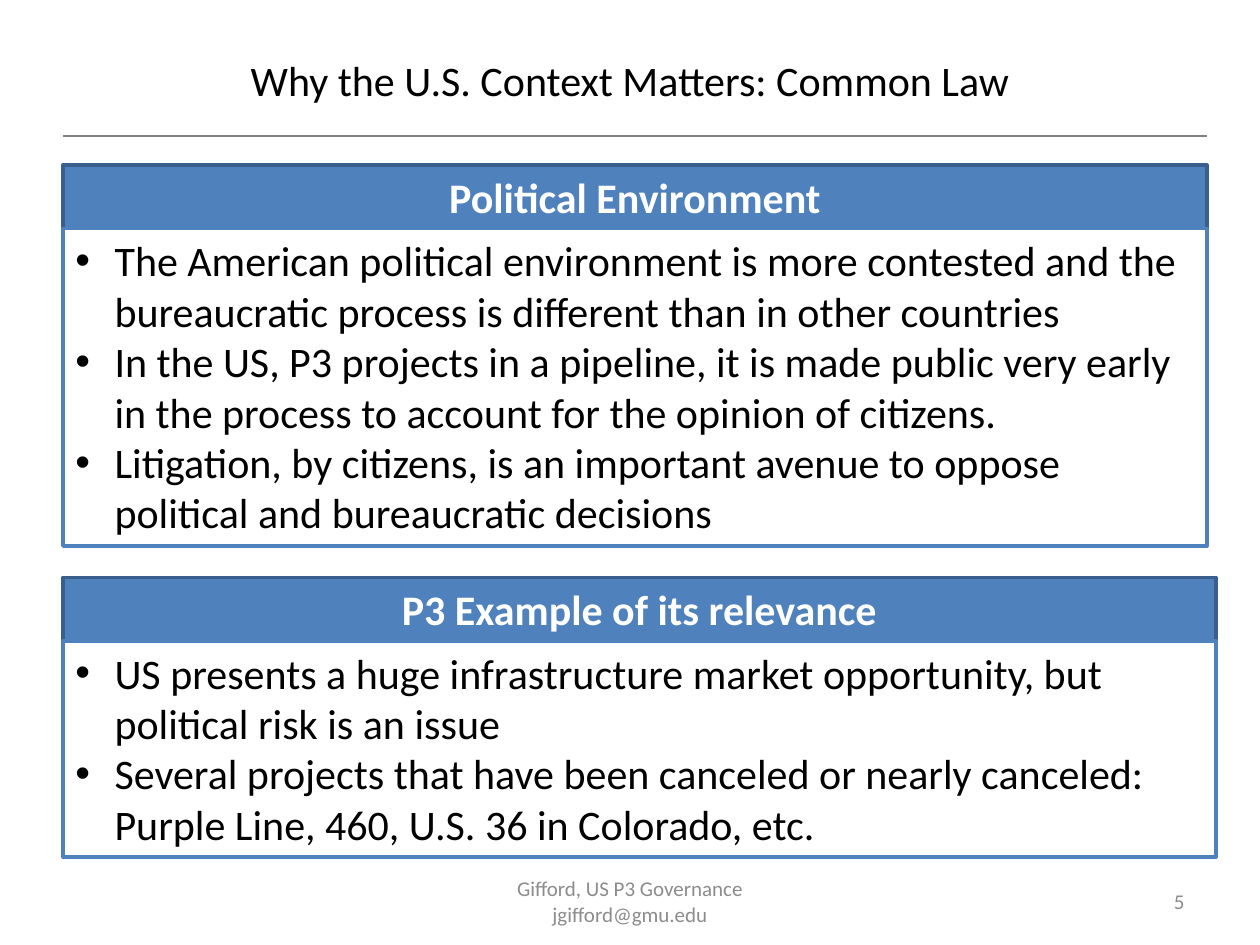
from dataclasses import dataclass

from lxml import etree
from pptx import Presentation
from pptx import util as u
from pptx.dml.color import RGBColor
from pptx.enum import shapes, text
from pptx.oxml.ns import qn


@dataclass(frozen=True)
class Theme:
    font: str = "Calibri"
    black: str = "000000"
    white: str = "FFFFFF"
    blue: str = "4F81BD"
    dark_blue: str = "3A5F8C"
    rule: str = "808080"
    muted: str = "8C8C8C"
    main_size: int = 24
    small_size: int = 12


class Deck:
    LEFT = 1.27
    HEADER_HEIGHT = 1.28
    BULLET_INDENT = 0.79

    def __init__(self, theme):
        self.theme = theme
        self.prs = Presentation()
        self.prs.slide_width, self.prs.slide_height = u.Cm(25.4), u.Cm(19.05)
        self.s = None

    def add_slide(self, title):
        self.s = self.prs.slides.add_slide(self.prs.slide_layouts[5])
        sp = self.s.shapes.title
        sp.left, sp.top, sp.width, sp.height = (
            u.Cm(v) for v in (self.LEFT, 0.33, 22.86, 2.57))
        tf = sp.text_frame
        tf.text = title
        tf.vertical_anchor = text.MSO_ANCHOR.MIDDLE
        self.format(tf, self.theme.black, align=text.PP_ALIGN.CENTER)

    def format(self, tf, color, size=None, bold=False, align=text.PP_ALIGN.LEFT):
        for p in tf.paragraphs:
            p.alignment = align
            for r in p.runs:
                r.font.name = self.theme.font
                r.font.size = u.Pt(size or self.theme.main_size)
                r.font.bold = bold
                r.font.color.rgb = RGBColor.from_string(color)

    def rule(self, y, width):
        line = self.s.shapes.add_connector(
            shapes.MSO_CONNECTOR.STRAIGHT, u.Cm(self.LEFT), u.Cm(y),
            u.Cm(self.LEFT + width), u.Cm(y))
        line.line.color.rgb = RGBColor.from_string(self.theme.rule)
        line.line.width = u.Pt(1.25)
        etree.SubElement(line._element.spPr, qn("a:effectLst"))

    def box(self, top, width, height, fill, outline, content):
        sp = self.s.shapes.add_shape(
            shapes.MSO_SHAPE.RECTANGLE, u.Cm(self.LEFT), u.Cm(top),
            u.Cm(width), u.Cm(height))
        sp.shadow.inherit = False
        sp.fill.solid()
        sp.fill.fore_color.rgb = RGBColor.from_string(fill)
        sp.line.color.rgb = RGBColor.from_string(outline)
        sp.line.width = u.Pt(2)
        tf = sp.text_frame
        tf.text = content
        tf.word_wrap = True
        tf.auto_size = text.MSO_AUTO_SIZE.SHAPE_TO_FIT_TEXT
        tf.vertical_anchor = text.MSO_ANCHOR.TOP
        return tf

    def panel(self, top, width, body_height, heading, points):
        """Draw a coloured heading bar with an outlined bullet list below."""
        t = self.theme
        tf = self.box(top, width, self.HEADER_HEIGHT, t.blue, t.dark_blue, heading)
        self.format(tf, t.white, bold=True, align=text.PP_ALIGN.CENTER)
        tf = self.box(top + self.HEADER_HEIGHT, width, body_height,
                      t.white, t.blue, "\n".join(points))
        for p in tf.paragraphs:
            self.bullet(p)
        self.format(tf, t.black)

    def bullet(self, p):
        pPr = p._p.get_or_add_pPr()
        indent = u.Cm(self.BULLET_INDENT)
        pPr.set("marL", str(indent))
        pPr.set("indent", str(-indent))
        etree.SubElement(pPr, qn("a:buFont"), typeface="Arial")
        etree.SubElement(pPr, qn("a:buChar"), char="•")

    def footer(self, left, width, content, align):
        sp = self.s.shapes.add_textbox(
            u.Cm(left), u.Cm(17.66), u.Cm(width), u.Cm(1.01))
        tf = sp.text_frame
        tf.text = content
        tf.word_wrap = True
        tf.vertical_anchor = text.MSO_ANCHOR.MIDDLE
        self.format(tf, self.theme.muted, self.theme.small_size, align=align)


def main():
    deck = Deck(Theme())
    deck.add_slide("Why the U.S. Context Matters: Common Law")
    deck.rule(2.74, 23.06)
    deck.panel(3.33, 23.06, 6.4, "Political Environment", [
        "The American political environment is more contested and the "
        "bureaucratic process is different than in other countries",
        "In the US, P3 projects in a pipeline, it is made public very early "
        "in the process to account for the opinion of citizens.",
        "Litigation, by citizens, is an important avenue to oppose "
        "political and bureaucratic decisions",
    ])
    deck.panel(11.64, 23.24, 4.36, "P3 Example of its relevance", [
        "US presents a huge infrastructure market opportunity, but "
        "political risk is an issue",
        "Several projects that have been canceled or nearly canceled: "
        "Purple Line, 460, U.S. 36 in Colorado, etc.",
    ])
    deck.footer(8.68, 8.04, "Gifford, US P3 Governance jgifford@gmu.edu",
                text.PP_ALIGN.CENTER)
    deck.footer(18.2, 5.93, "5", text.PP_ALIGN.RIGHT)
    deck.prs.save("out.pptx")


if __name__ == "__main__":
    main()
